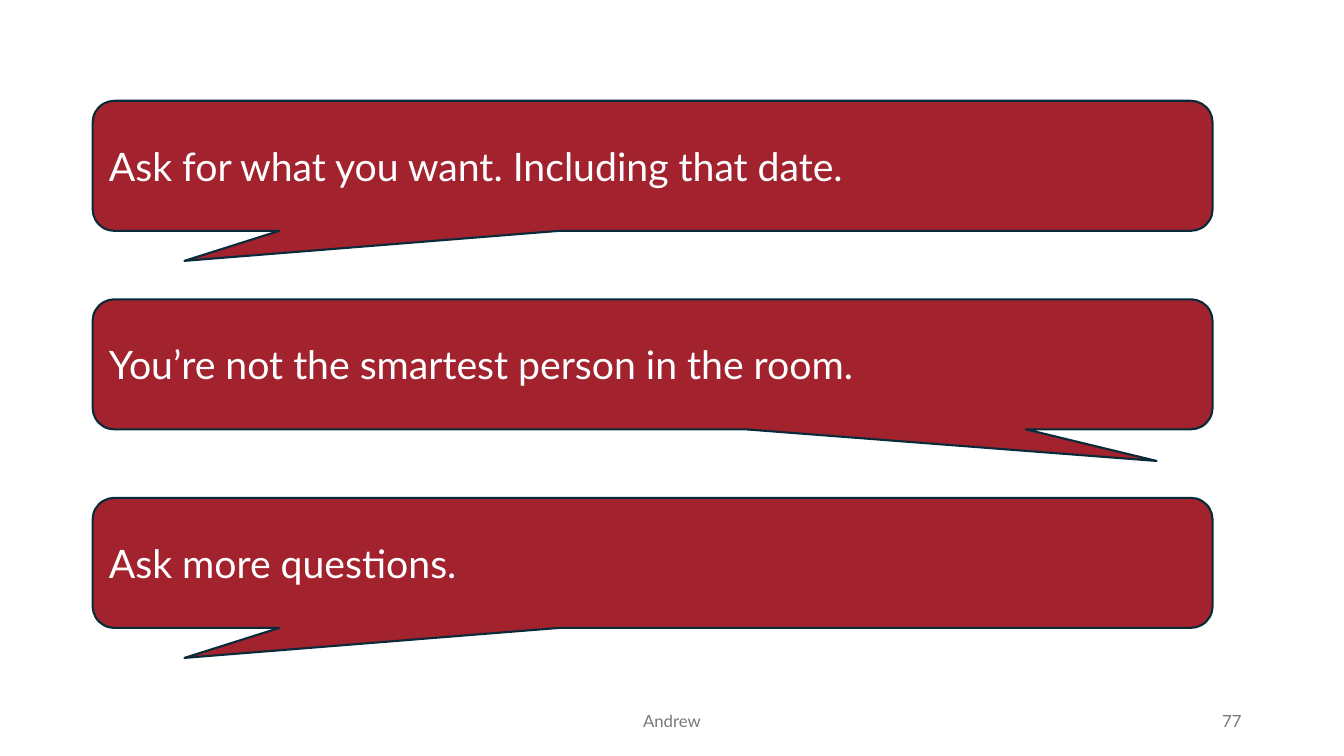
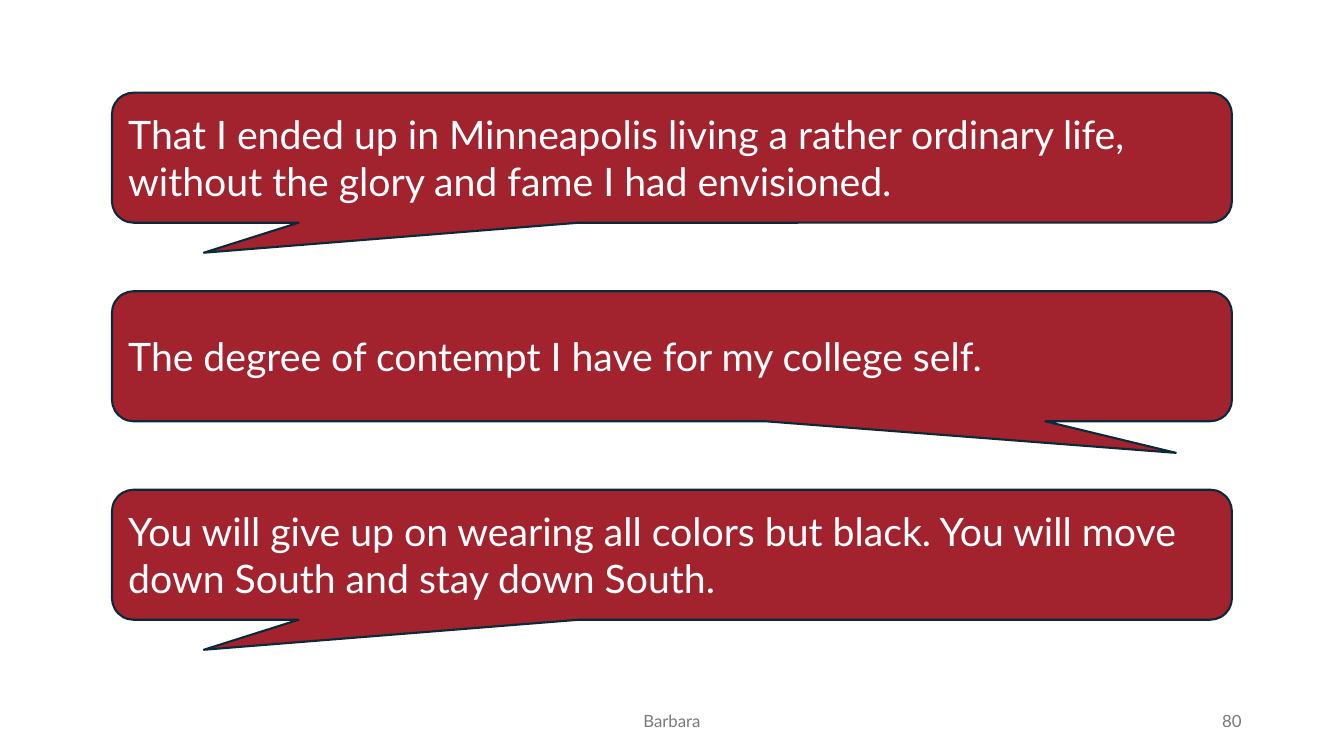
from dataclasses import dataclass

from pptx import Presentation
from pptx import util as u
from pptx.dml.color import RGBColor
from pptx.enum import shapes, text
from pptx.slide import Slide
from pptx.text.text import TextFrame

COLORS = {"bubble": "A2222E", "outline": "092A39", "quote": "FFFFFF", "footer": "797979"}
FONT = "Lato"

BUBBLE_WIDTH, BUBBLE_HEIGHT = 800, 92.9
BUBBLE_PITCH = 141.8
CORNER = 0.167
TAIL_LEFT, TAIL_RIGHT = (-0.418, 0.731), (0.45, 0.743)
FOOTER_TOP, FOOTER_HEIGHT = 500.4, 28.8


@dataclass(frozen=True)
class QuoteSlide:
    speaker: str
    number: int
    left: float
    top: float
    quotes: tuple[str, ...]


QUOTE_SLIDES = (
    QuoteSlide("Andrew", 77, 66.2, 72, (
        "Ask for what you want. Including that date.",
        "You’re not the smartest person in the room.",
        "Ask more questions.",
    )),
    QuoteSlide("Barbara", 80, 80, 66.2, (
        "That I ended up in Minneapolis living a rather ordinary life, "
        "without the glory and fame I had envisioned.",
        "The degree of contempt I have for my college self.",
        "You will give up on wearing all colors but black. "
        "You will move down South and stay down South.",
    )),
)


def color(name: str) -> RGBColor:
    return RGBColor.from_string(COLORS[name])


def write(frame: TextFrame, content: str, size: float, color_name: str,
          alignment: text.PP_ALIGN) -> None:
    """Fill a frame with one wrapped, vertically centred paragraph."""
    frame.word_wrap = True
    frame.vertical_anchor = text.MSO_ANCHOR.MIDDLE
    paragraph = frame.paragraphs[0]
    paragraph.text = content
    paragraph.alignment = alignment
    paragraph.font.name = FONT
    paragraph.font.size = u.Pt(size)
    paragraph.font.color.rgb = color(color_name)


def add_bubble(slide: Slide, left: float, top: float, quote: str,
               tail: tuple[float, float]) -> None:
    shape = slide.shapes.add_shape(
        shapes.MSO_SHAPE.ROUNDED_RECTANGULAR_CALLOUT,
        u.Pt(left), u.Pt(top), u.Pt(BUBBLE_WIDTH), u.Pt(BUBBLE_HEIGHT))
    for index, value in enumerate((*tail, CORNER)):
        shape.adjustments[index] = value
    shape.shadow.inherit = False
    shape.fill.solid()
    shape.fill.fore_color.rgb = color("bubble")
    shape.line.color.rgb = color("outline")
    shape.line.width = u.Pt(1.5)
    write(shape.text_frame, quote, 28, "quote", text.PP_ALIGN.LEFT)


def add_footer(slide: Slide, left: float, width: float, content: str,
               alignment: text.PP_ALIGN) -> None:
    box = slide.shapes.add_textbox(
        u.Pt(left), u.Pt(FOOTER_TOP), u.Pt(width), u.Pt(FOOTER_HEIGHT))
    write(box.text_frame, content, 12, "footer", alignment)


def add_quote_slide(presentation: Presentation, content: QuoteSlide) -> None:
    slide = presentation.slides.add_slide(presentation.slide_layouts[6])
    add_footer(slide, 318, 324, content.speaker, text.PP_ALIGN.CENTER)
    add_footer(slide, 678, 216, str(content.number), text.PP_ALIGN.RIGHT)
    for row, quote in enumerate(content.quotes):
        tail = TAIL_RIGHT if row % 2 else TAIL_LEFT
        add_bubble(slide, content.left, content.top + row * BUBBLE_PITCH, quote, tail)


def main() -> None:
    presentation = Presentation()
    presentation.slide_width = u.Pt(960)
    presentation.slide_height = u.Pt(540)
    for content in QUOTE_SLIDES:
        add_quote_slide(presentation, content)
    presentation.save("out.pptx")


if __name__ == "__main__":
    main()
